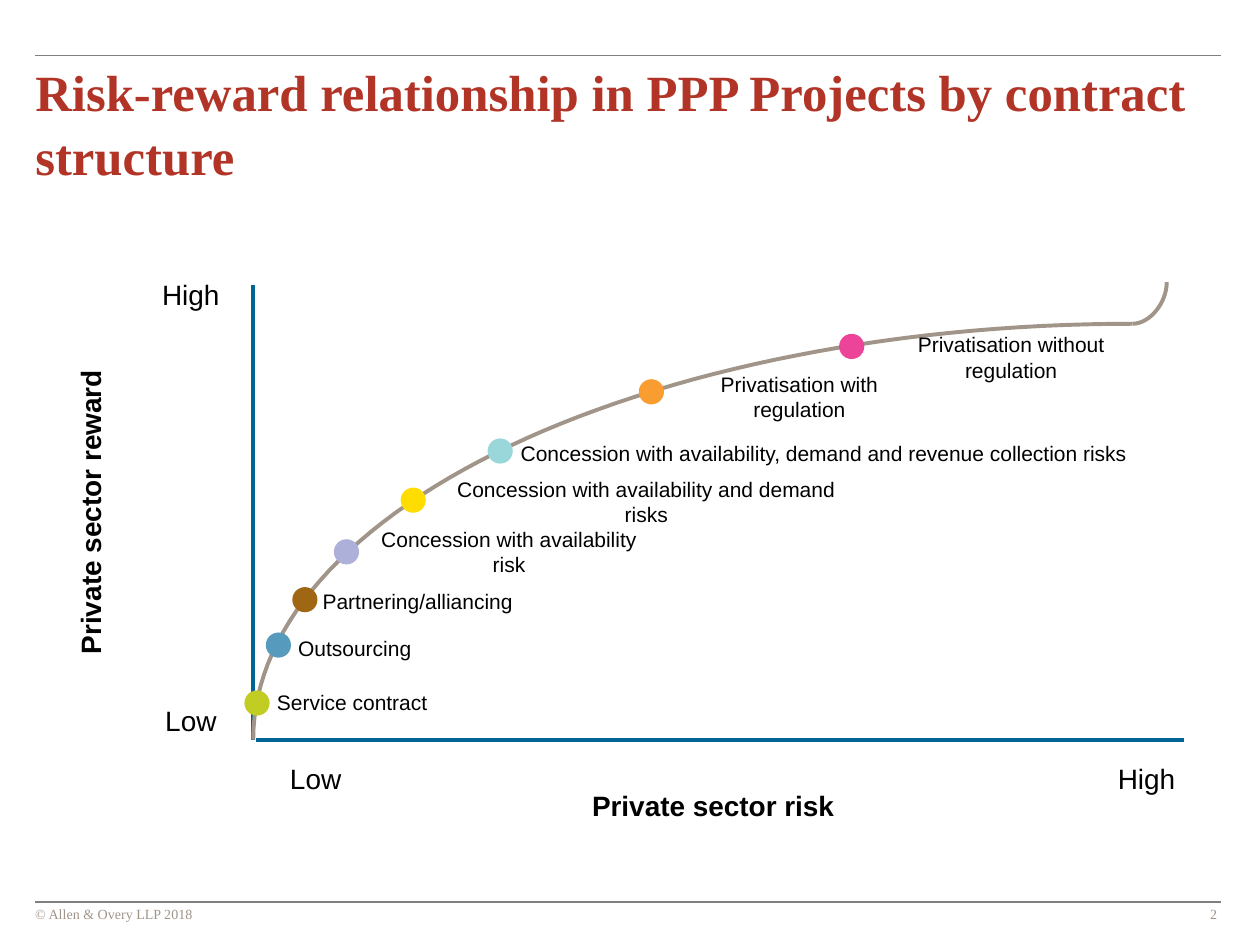
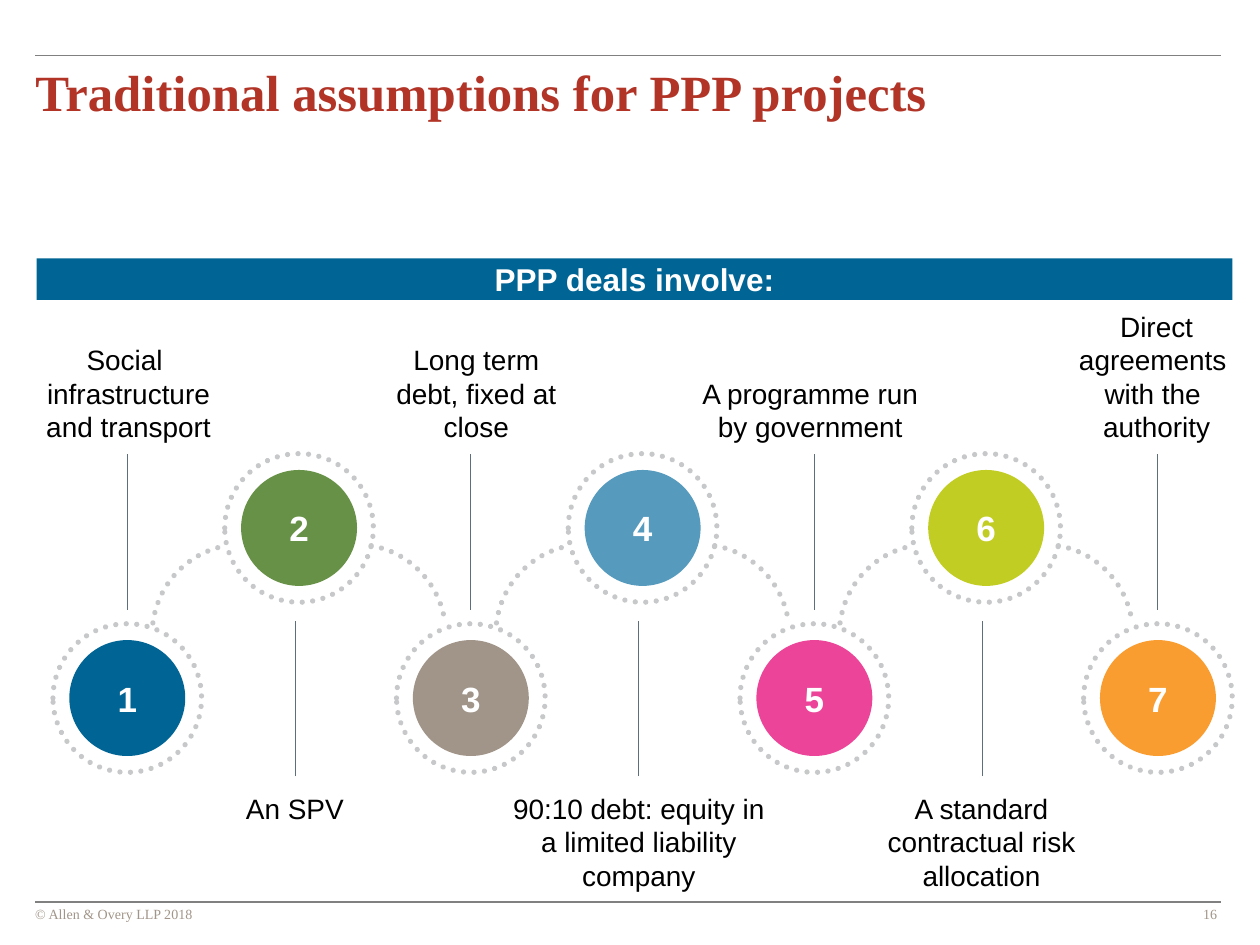
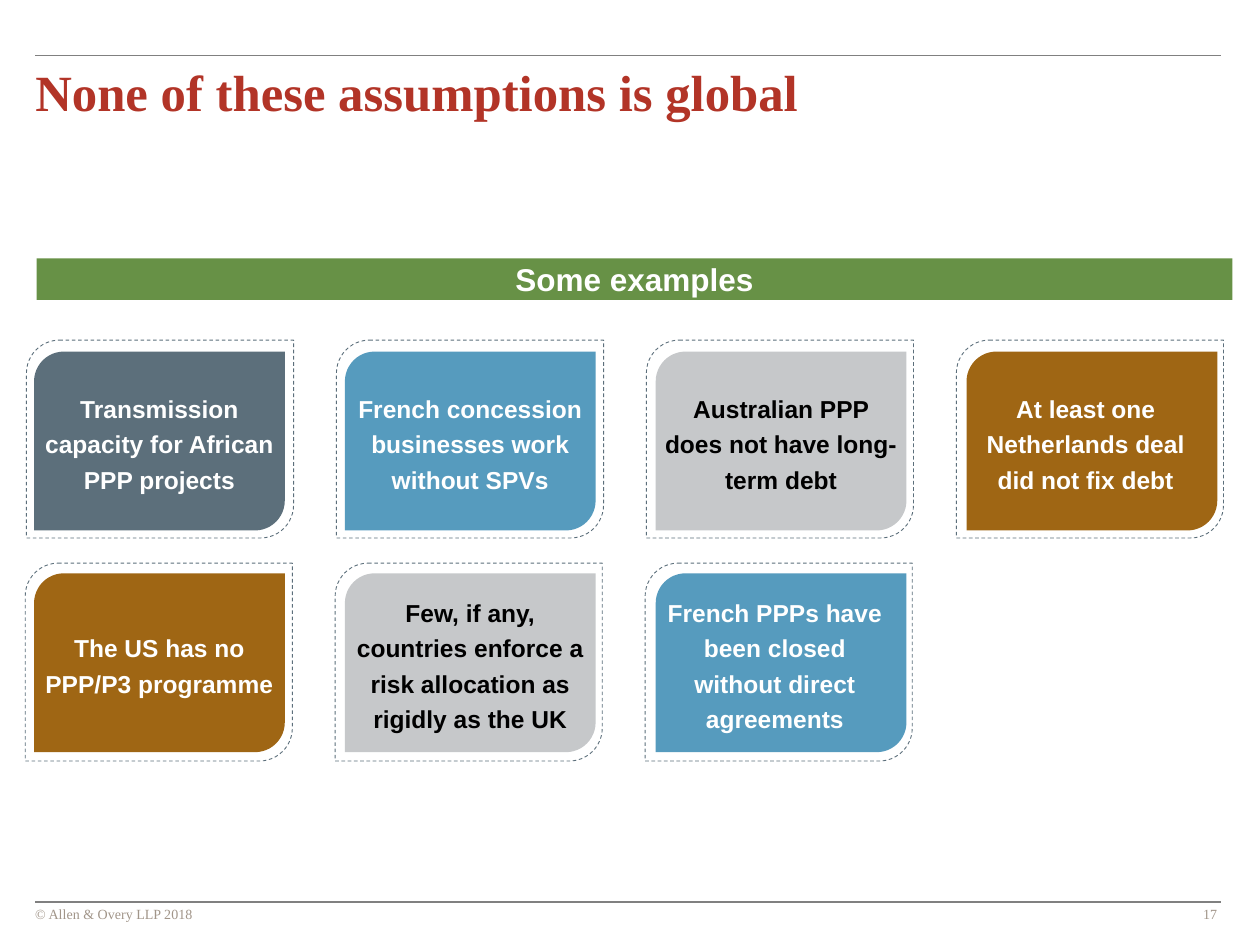
from math import cos, sin, pi
from pptx import Presentation
from pptx.util import Inches, Pt
from pptx.dml.color import RGBColor
from pptx.enum.dml import MSO_LINE as Dash
from pptx.enum.shapes import MSO_SHAPE as Kind, MSO_CONNECTOR as Conn
from pptx.enum.text import PP_ALIGN as Align, MSO_ANCHOR as Anchor
from pptx.oxml.ns import qn
from lxml.etree import SubElement as sub

# Shared style
WIDE, HIGH = 10, 7.5
SANS, SERIF = "Arial", "Times New Roman"
RED, BLUE, SKY, TAUPE = "B23427", "006595", "569BBE", "A19589"
GREEN, LIME, PINK, ORANGE = "679146", "C2CD23", "EB4498", "F99D31"
BROWN, SLATE, PALE, DOTS = "9F6614", "5C6F7B", "C6C8CA", "C7C8CA"
GREY, BLACK, WHITE = "808080", "000000", "FFFFFF"
LEFT, RIGHT = 0.28, 9.69
COPY = "© Allen & Overy LLP 2018"

# Slide 1: dot centre, then label box
DEALS = [
    ("Service contract", LIME, (2.04, 5.58), (1.8, 5.38, 1.99, 0.38)),
    ("Outsourcing", SKY, (2.21, 5.12), (1.82, 4.95, 1.99, 0.38)),
    ("Partnering/alliancing", BROWN, (2.42, 4.76), (2.32, 4.58, 1.99, 0.38)),
    ("Concession with availability risk", "ADB0D8", (2.75, 4.38),
     (2.84, 4.19, 2.4, 0.38)),
    ("Concession with availability and demand risks", "FFDD00", (3.28, 3.97),
     (3.36, 3.79, 3.54, 0.38)),
    ("Concession with availability, demand and revenue collection risks",
     "9AD7DB", (3.97, 3.58), (3.89, 3.36, 5.3, 0.47)),
    ("Privatisation with regulation", ORANGE, (5.17, 3.11),
     (5.26, 2.96, 2.17, 0.38)),
    ("Privatisation without regulation", PINK, (6.76, 2.75),
     (6.88, 2.66, 2.29, 0.35)),
]
SCALES = [  # text, box, bold, turn
    ("High", (1.1, 2.18, 0.83, 0.31), False, 0),
    ("Low", (1.1, 5.56, 0.83, 0.31), False, 0),
    ("Low", (2.09, 6.02, 0.83, 0.31), False, 0),
    ("High", (8.75, 6.02, 0.7, 0.31), False, 0),
    ("Private sector risk", (4.54, 6.24, 2.24, 0.31), True, 0),
    ("Private sector reward", (-0.63, 3.65, 2.69, 0.83), True, 270),
]

# Slide 2: text, colour, text centre, text width, line count
STEPS = [
    ("Social \ninfrastructure and transport", BLUE, 1.02, 1.45, 3),
    ("An SPV", GREEN, 2.34, 2.25, 1),
    ("Long term debt, fixed at close", TAUPE, 3.78, 1.45, 3),
    ("90:10 debt: equity in a limited liability company", SKY, 5.07, 2.17, 3),
    ("A programme run by government", PINK, 6.43, 1.88, 2),
    ("A standard contractual risk allocation", LIME, 7.79, 1.9, 3),
    ("Direct agreements \nwith the \nauthority", ORANGE, 9.18, 1.46, 4),
]

# Slide 3: text, fill, text colour, right inset
CARDS = [
    ("Transmission capacity for African PPP projects", SLATE, WHITE, 0),
    ("French concession businesses work without SPVs", SKY, WHITE, 0),
    ("Australian PPP does not have long-term debt", PALE, BLACK, 0),
    ("At least one Netherlands deal did not fix debt", BROWN, WHITE, 0.1),
    ("The US has no PPP/P3 programme", BROWN, WHITE, 0),
    ("Few, if any, countries enforce a risk allocation as rigidly as the UK",
     PALE, BLACK, 0),
    ("French PPPs have been closed without direct agreements", SKY, WHITE, 0.1),
]


def rgb(code):
    return RGBColor.from_string(code)


def write(shape, text, size, color=BLACK, font=SANS, bold=False,
          align=Align.CENTER, anchor=Anchor.MIDDLE, inset=None, wrap=True,
          space=None):
    frame = shape.text_frame
    frame.word_wrap, frame.vertical_anchor = wrap, anchor
    if inset is not None:
        (frame.margin_left, frame.margin_top, frame.margin_right,
         frame.margin_bottom) = map(Inches, inset)
    for i, line in enumerate(text.split("\n")):
        para = frame.add_paragraph() if i else frame.paragraphs[0]
        para.alignment, para.line_spacing = align, space
        run = para.add_run()
        run.text = line
        run.font.name, run.font.size, run.font.bold = font, Pt(size), bold
        run.font.color.rgb = rgb(color)


def label(slide, box, text, size, turn=0, **style):
    shape = slide.shapes.add_textbox(*map(Inches, box))
    shape.rotation = turn
    write(shape, text, size, **style)


def stroke(shape, color, width, dash=None):
    shape.line.color.rgb, shape.line.width = rgb(color), Pt(width)
    if dash:
        shape.line.dash_style = dash
    if dash == Dash.ROUND_DOT:
        shape.element.spPr.find(qn("a:ln")).set("cap", "rnd")


def draw(slide, kind, box, fill=None, line=None):
    shape = slide.shapes.add_shape(kind, *map(Inches, box))
    shape.shadow.inherit = False
    if fill:
        shape.fill.solid()
        shape.fill.fore_color.rgb = rgb(fill)
    else:
        shape.fill.background()
    if line:
        stroke(shape, *line)
    else:
        shape.line.fill.background()
    return shape


def disc(slide, x, y, r, **look):
    return draw(slide, Kind.OVAL, (x - r, y - r, 2 * r, 2 * r), **look)


def rule(slide, start, end, color, width, kind=Conn.STRAIGHT):
    link = slide.shapes.add_connector(kind, *map(Inches, start + end))
    stroke(link, color, width)
    sub(link.element.spPr, qn("a:effectLst"))
    return link


def page(deck, title, number):
    slide = deck.slides.add_slide(deck.slide_layouts[5])
    for y in (0.44, 7.16):
        rule(slide, (LEFT, y), (RIGHT, y), GREY, 1)
    flat = dict(font=SERIF, anchor=Anchor.TOP, inset=(0, 0, 0, 0))
    label(slide, (LEFT, 7.19, 7.17, 0.13), COPY, 8, color=TAUPE,
          align=Align.LEFT, **flat)
    label(slide, (9.19, 7.19, 0.47, 0.13), str(number), 8, color=TAUPE,
          align=Align.RIGHT, **flat)
    head = slide.shapes.title
    head.left, head.top, head.width, head.height = map(
        Inches, (LEFT, 0.46, 9.37, 0.98))
    write(head, title, 29, RED, bold=True, align=Align.LEFT, space=1.05, **flat)
    return slide


def banner(slide, text, fill):
    bar = draw(slide, Kind.RECTANGLE, (0.29, 2.05, 9.49, 0.33), fill)
    write(bar, text, 18, WHITE, bold=True)


def risk(deck):
    slide = page(deck, "Risk-reward relationship in PPP Projects by contract "
                 "structure", 2)
    # Axes
    x, base = 2.01, 5.87
    rule(slide, (x, 2.26), (x, base), BLUE, 2.25)
    rule(slide, (x + 0.02, base), (9.4, base), BLUE, 2.25)
    for text, box, bold, turn in SCALES:
        label(slide, box, text, 16, turn, bold=bold, wrap=False)
    # Quarter ellipse, then the upturn at its end
    wide, high, count = 6.98, 3.3, 60
    spots = [(Inches(x + wide * (1 - cos(a))), Inches(base - high * sin(a)))
             for a in (pi / 2 * i / count for i in range(count + 1))]
    pen = slide.shapes.build_freeform(*spots[0])
    pen.add_line_segments(spots[1:], close=False)
    curve = pen.convert_to_shape()
    curve.shadow.inherit = False
    curve.fill.background()
    stroke(curve, TAUPE, 2.25)
    hook = rule(slide, (x + wide, base - high), (9.26, 2.24), TAUPE, 2.25,
                Conn.CURVE)
    hook.element.spPr.find(qn("a:prstGeom")).set("prst", "curvedConnector2")
    # Contract types
    for text, fill, spot, box in DEALS:
        label(slide, box, text, 12, wrap=False)
        disc(slide, *spot, 0.1, fill=fill)


def steps(deck):
    slide = page(deck, "Traditional assumptions for PPP projects", 16)
    dots = (DOTS, 3, Dash.ROUND_DOT)
    for i, (text, fill, mid, wide, lines) in enumerate(STEPS):
        upper = i % 2
        x, y = 1.01 + i * 8.18 / 6, 4.19 if upper else 5.54
        disc(slide, x, y, 0.59, line=dots)
        write(disc(slide, x, y, 0.46, fill=fill), str(i + 1), 20, WHITE,
              bold=True)
        # Stem and text on the free side of the ring
        stem, low, top = (x - 0.03, 6.16, 4.93) if upper else (x, 4.84, 3.6)
        rule(slide, (stem, low), (stem, top), SLATE, 0.5)
        tall = lines * 0.27
        label(slide, (mid - wide / 2, 6.28 if upper else 3.52 - tall, wide,
                      tall), text, 16, inset=(0, 0, 0, 0),
              anchor=Anchor.TOP if upper else Anchor.BOTTOM)
        # Arcs down to both neighbours
        if upper:
            for shift, first, last in ((0.45, 279.9, 352.7),
                                       (-0.45, 187.3, 260.1)):
                arc = draw(slide, Kind.ARC, (x + shift - 0.715, 4.32, 1.43,
                                             1.43), line=dots)
                # Angles count in units of 5/3 degree
                arc.adjustments[0], arc.adjustments[1] = first * 0.6, last * 0.6
    banner(slide, "PPP deals involve:", BLUE)


def cases(deck):
    slide = page(deck, "None of these assumptions is global", 17)
    for i, (text, fill, color, pad) in enumerate(CARDS):
        row, col = divmod(i, 4)
        leaf = Kind.ROUND_2_DIAG_RECTANGLE
        card = draw(slide, leaf, (0.27 + 2.467 * col, 2.79 + 1.76 * row, 1.99,
                                  1.42), fill)
        write(card, text, 14, color, bold=True, space=1.2,
              inset=(0, pad / 2, pad, pad / 2))
        draw(slide, leaf, (0.21 + 2.46 * col - 0.01 * row, 2.7 + 1.77 * row,
                           2.12, 1.57), line=(SLATE, 0.5, Dash.DASH))
    banner(slide, "Some examples", GREEN)


def main():
    deck = Presentation()
    deck.slide_width, deck.slide_height = Inches(WIDE), Inches(HIGH)
    for build in (risk, steps, cases):
        build(deck)
    deck.save("out.pptx")


if __name__ == "__main__":
    main()
